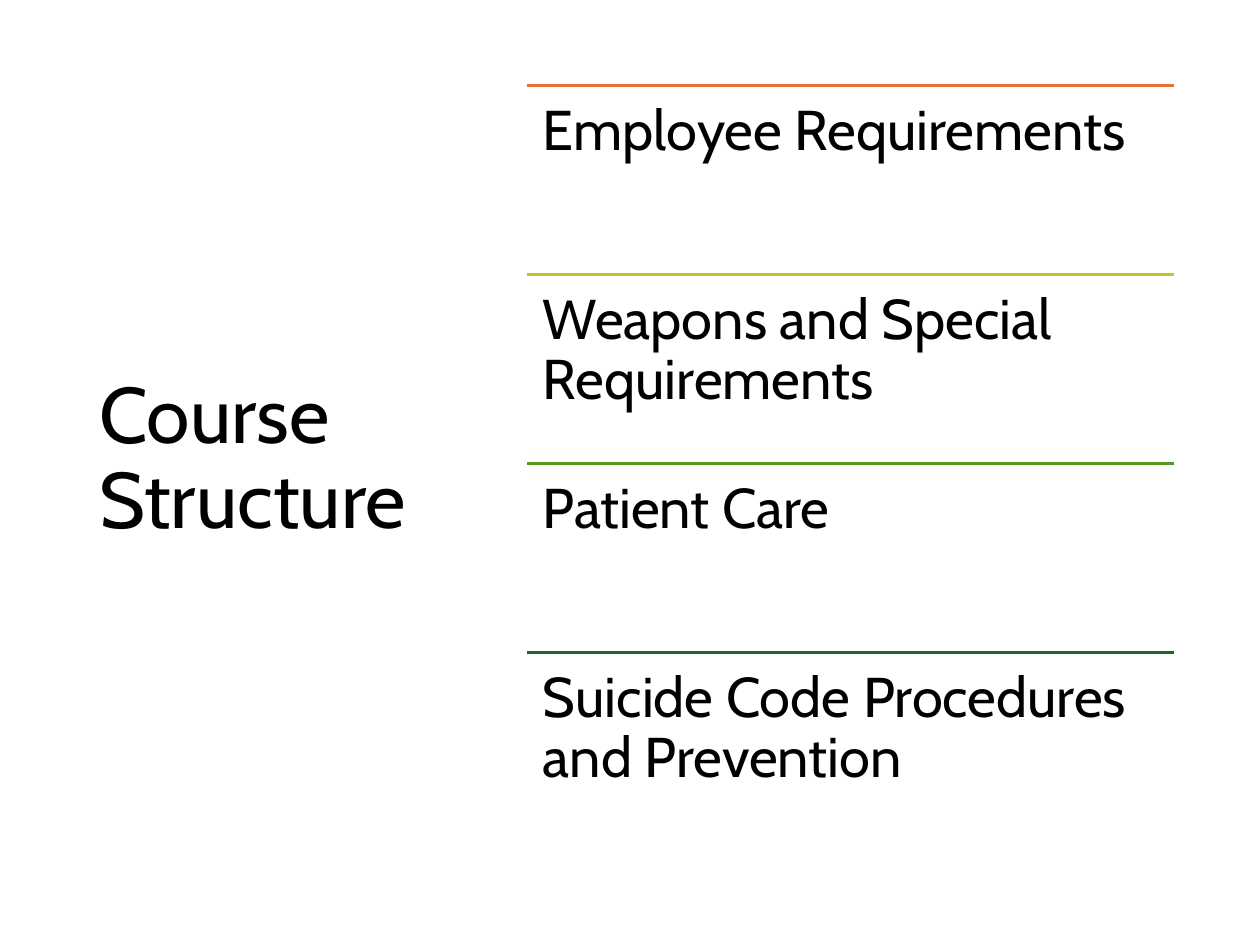
from lxml import etree
from pptx import Presentation
from pptx.dml.color import RGBColor
from pptx.enum import shapes, text
from pptx.oxml import ns
from pptx.util import Inches, Pt

BLACK = RGBColor(0x00, 0x00, 0x00)
ORANGE = RGBColor(0xE9, 0x71, 0x32)
YELLOW = RGBColor(0xCB, 0xC1, 0x1E)
LIME = RGBColor(0x56, 0x99, 0x1D)
GREEN = RGBColor(0x19, 0x6B, 0x24)

SECTIONS = [
    ("Employee Requirements", ORANGE),
    ("Weapons and Special Requirements", YELLOW),
    ("Patient Care", LIME),
    ("Suicide Code Procedures and Prevention", GREEN),
]
LEFT, TOP, WIDTH = Inches(4.18), Inches(0.68), Inches(5.14)
ROW_HEIGHT = Inches(1.5)
INSET = Inches(0.13)


def style_paragraph(paragraph, size):
    paragraph.alignment = text.PP_ALIGN.LEFT
    paragraph.line_spacing = 0.9
    paragraph.font.name = "Cabin"
    paragraph.font.size = Pt(size)
    paragraph.font.color.rgb = BLACK


prs = Presentation()
prs.slide_width, prs.slide_height = Inches(10), Inches(7.5)
slide = prs.slides.add_slide(prs.slide_layouts[5])

title = slide.shapes.title
title.left, title.top = Inches(0.69), Inches(0.61)
title.width, title.height = Inches(2.77), Inches(6.09)
title.text_frame.text = "Course Structure"
title.text_frame.word_wrap = True
title.text_frame.auto_size = text.MSO_AUTO_SIZE.NONE
title.text_frame.vertical_anchor = text.MSO_ANCHOR.MIDDLE
style_paragraph(title.text_frame.paragraphs[0], 45)

outline = slide.shapes.add_group_shape()
for row, (section, color) in enumerate(SECTIONS):
    top = TOP + row * ROW_HEIGHT
    rule = outline.shapes.add_connector(
        shapes.MSO_CONNECTOR.STRAIGHT, LEFT, top, LEFT + WIDTH, top)
    rule.line.color.rgb = color
    rule.line.width = Pt(1.5)
    etree.SubElement(rule._element.spPr, ns.qn("a:effectLst"))

    label = outline.shapes.add_textbox(LEFT, top, WIDTH, ROW_HEIGHT).text_frame
    label.word_wrap = True
    label.margin_left = label.margin_right = INSET
    label.margin_top = label.margin_bottom = INSET
    label.text = section
    style_paragraph(label.paragraphs[0], 32)

prs.save("out.pptx")
